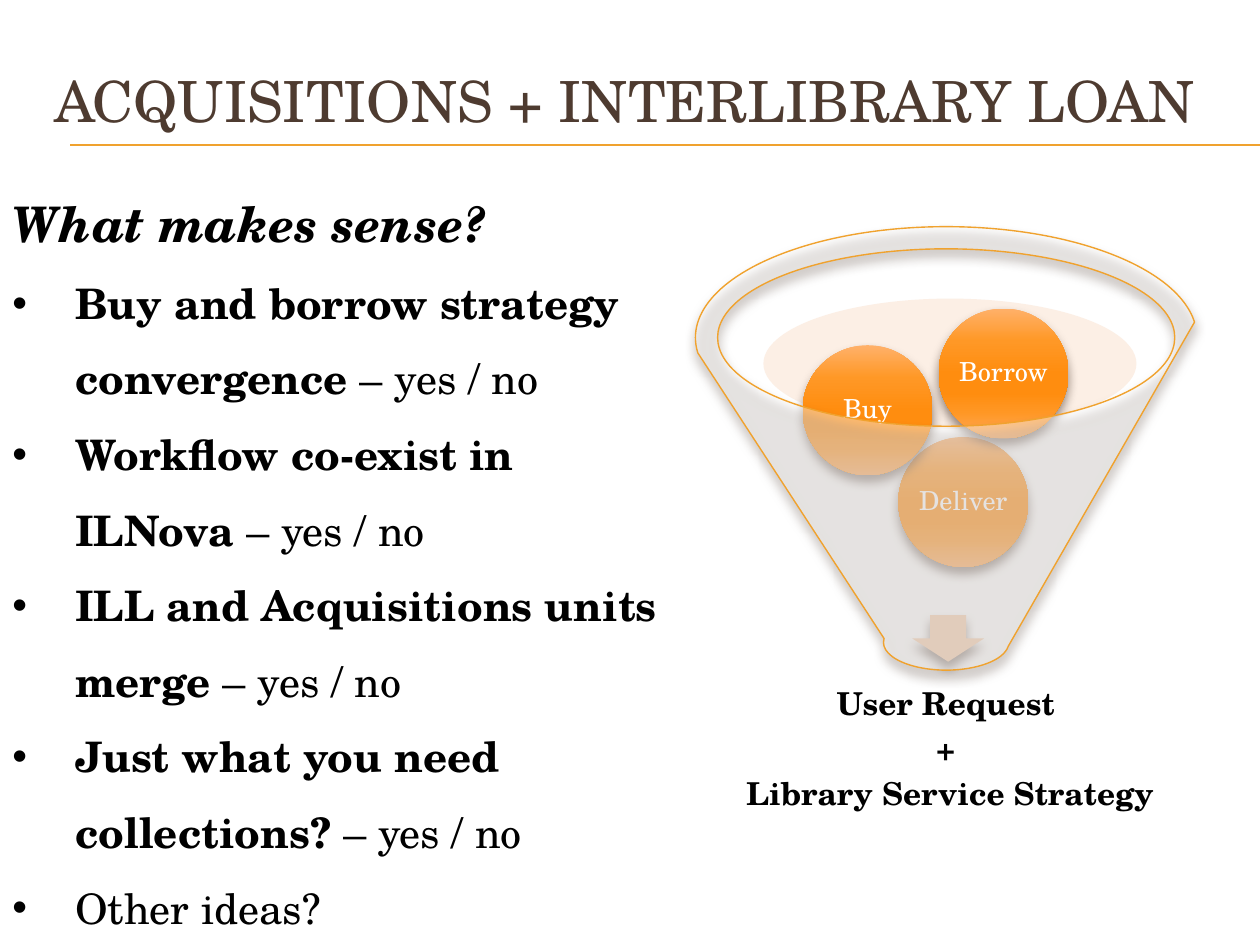
from lxml import etree
from pptx import Presentation
from pptx.dml.color import RGBColor
from pptx.enum.shapes import MSO_CONNECTOR, MSO_SHAPE
from pptx.enum.text import MSO_ANCHOR, MSO_AUTO_SIZE, PP_ALIGN
from pptx.oxml.ns import qn
from pptx.util import Cm, Pt

LEFT, CENTER = PP_ALIGN.LEFT, PP_ALIGN.CENTER
TOP, MIDDLE = MSO_ANCHOR.TOP, MSO_ANCHOR.MIDDLE
OVAL, ARROW, FUNNEL = MSO_SHAPE.OVAL, MSO_SHAPE.DOWN_ARROW, MSO_SHAPE.FUNNEL

FONT = "TeX Gyre Schola"
BLACK = RGBColor(0x00, 0x00, 0x00)
WHITE = RGBColor(0xFF, 0xFF, 0xFF)
BROWN = RGBColor(0x4E, 0x3B, 0x30)
GOLD = RGBColor(0xF0, 0xA2, 0x2E)
PEACH = RGBColor(0xF8, 0xD7, 0xBE)
SAND = RGBColor(0xF6, 0xCE, 0xAD)
BALL_STOPS = [
    (0, RGBColor(0xFF, 0xB1, 0x6A)), (25, RGBColor(0xFF, 0x98, 0x26)),
    (50, RGBColor(0xFF, 0x8D, 0x0F)), (65, RGBColor(0xFF, 0x8D, 0x0F)),
    (80, RGBColor(0xFF, 0x97, 0x24)), (100, RGBColor(0xFF, 0xAA, 0x5C)),
]

TITLE = "ACQUISITIONS + INTERLIBRARY LOAN"
QUESTION = "What makes sense?"
ANSWER = "– yes / no"
IDEAS = [
    ("Buy and borrow strategy convergence ", ANSWER),
    ("Workflow co-exist in ILNova ", ANSWER),
    ("ILL and Acquisitions units merge ", ANSWER),
    ("Just what you need collections? ", ANSWER),
    ("", "Other ideas?"),
]
BALLS = [("Deliver", 18.11, 8.81), ("Buy", 16.18, 6.96), ("Borrow", 18.92, 6.22)]
BALL_SIZE = 2.62
RESULT = ["User Request ", "+ ", "Library Service Strategy"]
RULES = [2.92, 2.94]


def add_el(parent, tag, **attrs):
    el = etree.SubElement(parent, qn(tag))
    for key, value in attrs.items():
        el.set(key, str(value))
    return el


def add_color(parent, color, alpha=100):
    clr = add_el(parent, "a:srgbClr", val=color)
    if alpha < 100:
        add_el(clr, "a:alpha", val=alpha * 1000)


def add_text(p, text, size, color=BLACK, bold=False, italic=False):
    r = p.add_run()
    r.text = text
    f = r.font
    f.name, f.size, f.bold, f.italic = FONT, Pt(size), bold, italic
    f.color.rgb = color


def setup_frame(tf, anchor, inset=None, wrap=True):
    tf.word_wrap = wrap
    tf.vertical_anchor = anchor
    if inset is not None:
        tf.margin_left = tf.margin_right = Cm(inset)
        tf.margin_top = tf.margin_bottom = Cm(inset)


def add_lines(tf, lines, size, **fmt):
    for i, text in enumerate(lines):
        p = tf.add_paragraph() if i else tf.paragraphs[0]
        p.alignment, p.line_spacing = CENTER, 0.9
        p.space_after = Pt(size * 0.35)
        add_text(p, text, size, **fmt)


def add_bullet(p):
    pPr = p._p.get_or_add_pPr()
    pPr.set("marL", str(Cm(1.27)))
    pPr.set("indent", str(-Cm(1.27)))
    add_el(pPr, "a:buFont", typeface="Arial")
    add_el(pPr, "a:buChar", char="•")


def add_shape(s, kind, box, fill=None, alpha=100, line=None, shadow=True):
    sp = s.shapes.add_shape(kind, *map(Cm, box))
    sp.shadow.inherit = False
    if fill is not None:
        sp.fill.solid()
        sp.fill.fore_color.rgb = fill
        if alpha < 100:
            clr = sp._element.spPr.find(".//" + qn("a:srgbClr"))
            add_el(clr, "a:alpha", val=alpha * 1000)
    if line is None:
        sp.line.fill.background()
    else:
        sp.line.color.rgb = line
        sp.line.width = Pt(0.79)
    if shadow:
        effects = sp._element.spPr.find(qn("a:effectLst"))
        outer = add_el(effects, "a:outerShdw", blurRad=Pt(6), dist=Pt(4),
                       dir=90 * 60000, rotWithShape=0)
        add_color(outer, BROWN, 60)
    return sp


def add_ball(s, text, x, y):
    sp = add_shape(s, OVAL, (x, y, BALL_SIZE, BALL_SIZE))
    sp.fill.gradient()
    sp.fill.gradient_angle = 270
    stops = sp._element.spPr.find(".//" + qn("a:gsLst"))
    for old in list(stops):
        stops.remove(old)
    for pos, color in BALL_STOPS:
        add_color(add_el(stops, "a:gs", pos=pos * 1000), color)
    setup_frame(sp.text_frame, MIDDLE, 0.05, wrap=False)
    add_lines(sp.text_frame, [text], 15, color=WHITE)


def add_title(s):
    sp = s.shapes.title
    sp.left, sp.top, sp.width, sp.height = map(Cm, (0.84, 0.84, 24.13, 2.34))
    tf = sp.text_frame
    setup_frame(tf, MIDDLE)
    tf.auto_size = MSO_AUTO_SIZE.NONE
    tf.paragraphs[0].alignment = LEFT
    add_text(tf.paragraphs[0], TITLE, 32.4, color=BROWN)


def add_rule(s, y):
    line = s.shapes.add_connector(MSO_CONNECTOR.STRAIGHT, Cm(1.42), Cm(y), Cm(25.4), Cm(y))
    line.line.color.rgb = GOLD
    line.line.width = Pt(0.75)
    add_el(line._element.spPr, "a:effectLst")


def add_ideas(s):
    tf = s.shapes.add_textbox(*map(Cm, (0, 3.18, 13.77, 15.9))).text_frame
    setup_frame(tf, TOP)
    tf.auto_size = MSO_AUTO_SIZE.SHAPE_TO_FIT_TEXT
    p = tf.paragraphs[0]
    p.line_spacing = 1.5
    add_text(p, QUESTION, 28, bold=True, italic=True)
    for idea, answer in IDEAS:
        p = tf.add_paragraph()
        p.line_spacing = 1.5
        add_bullet(p)
        if idea:
            add_text(p, idea, 24, bold=True)
        add_text(p, answer, 24)


def add_funnel(s):
    add_shape(s, OVAL, (15.39, 6.02, 7.52, 2.62), PEACH, alpha=40, shadow=False)
    add_shape(s, ARROW, (18.39, 12.4, 1.45, 0.94), SAND)
    tf = s.shapes.add_textbox(*map(Cm, (13.34, 13.51, 11.63, 3.23))).text_frame
    setup_frame(tf, MIDDLE, 0.36)
    add_lines(tf, RESULT, 18, bold=True)
    for ball in BALLS:
        add_ball(s, *ball)
    add_shape(s, FUNNEL, (14.02, 4.57, 10.11, 8.94), WHITE, alpha=40, line=GOLD)


def main():
    prs = Presentation()
    prs.slide_width, prs.slide_height = Cm(25.4), Cm(19.05)
    s = prs.slides.add_slide(prs.slide_layouts[5])
    add_title(s)
    for y in RULES:
        add_rule(s, y)
    add_ideas(s)
    add_funnel(s)
    prs.save("out.pptx")


if __name__ == "__main__":
    main()
